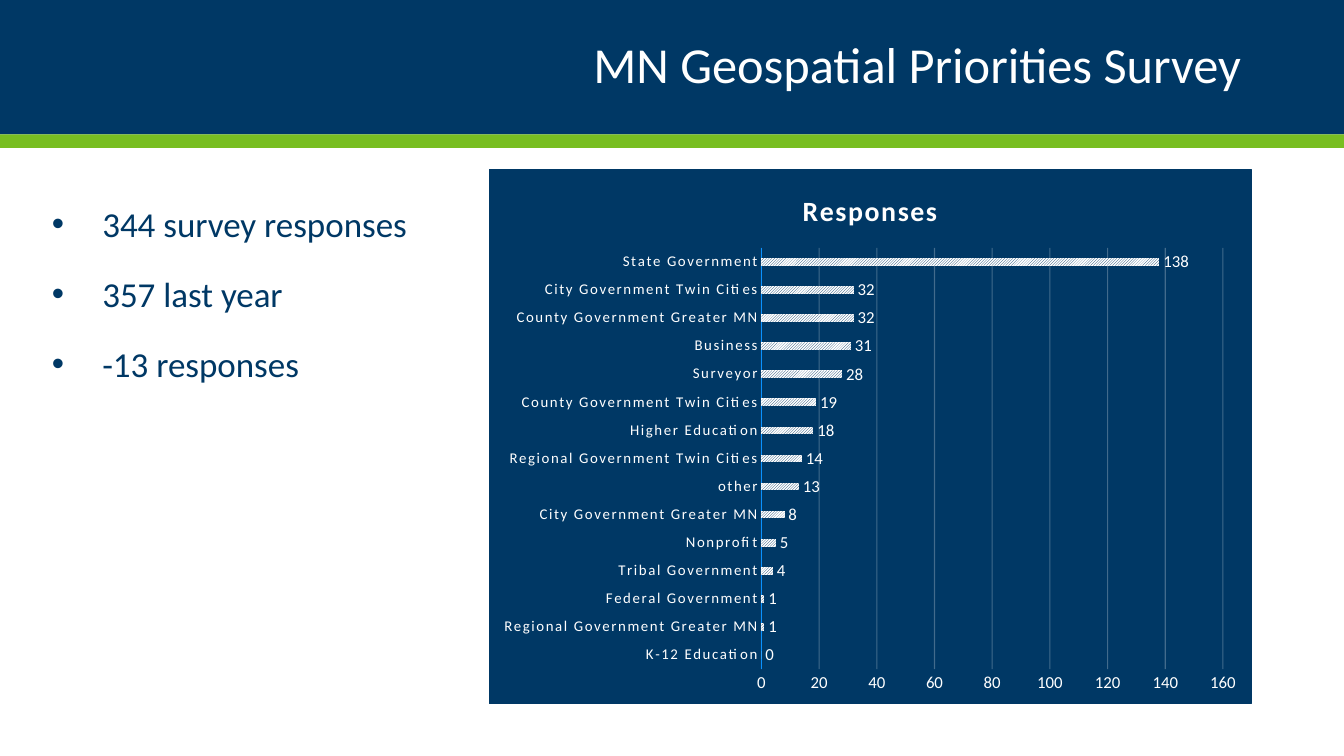
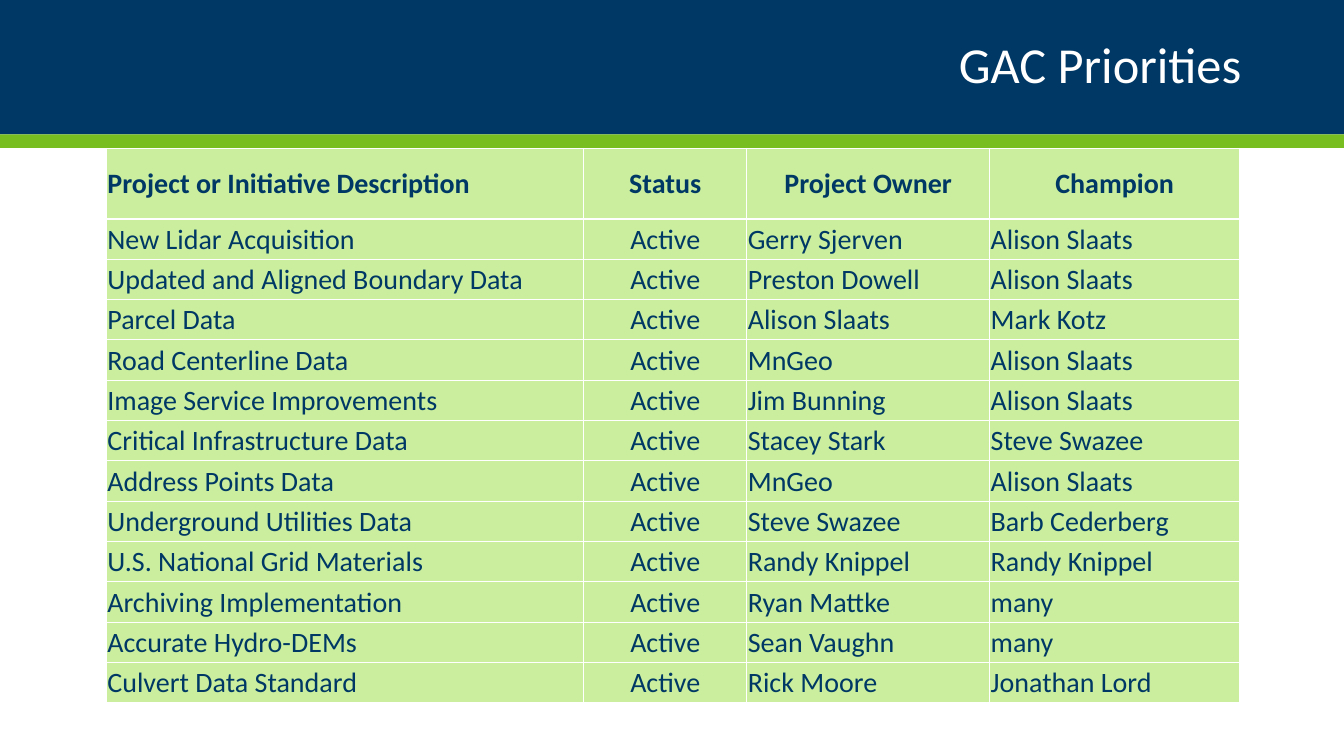
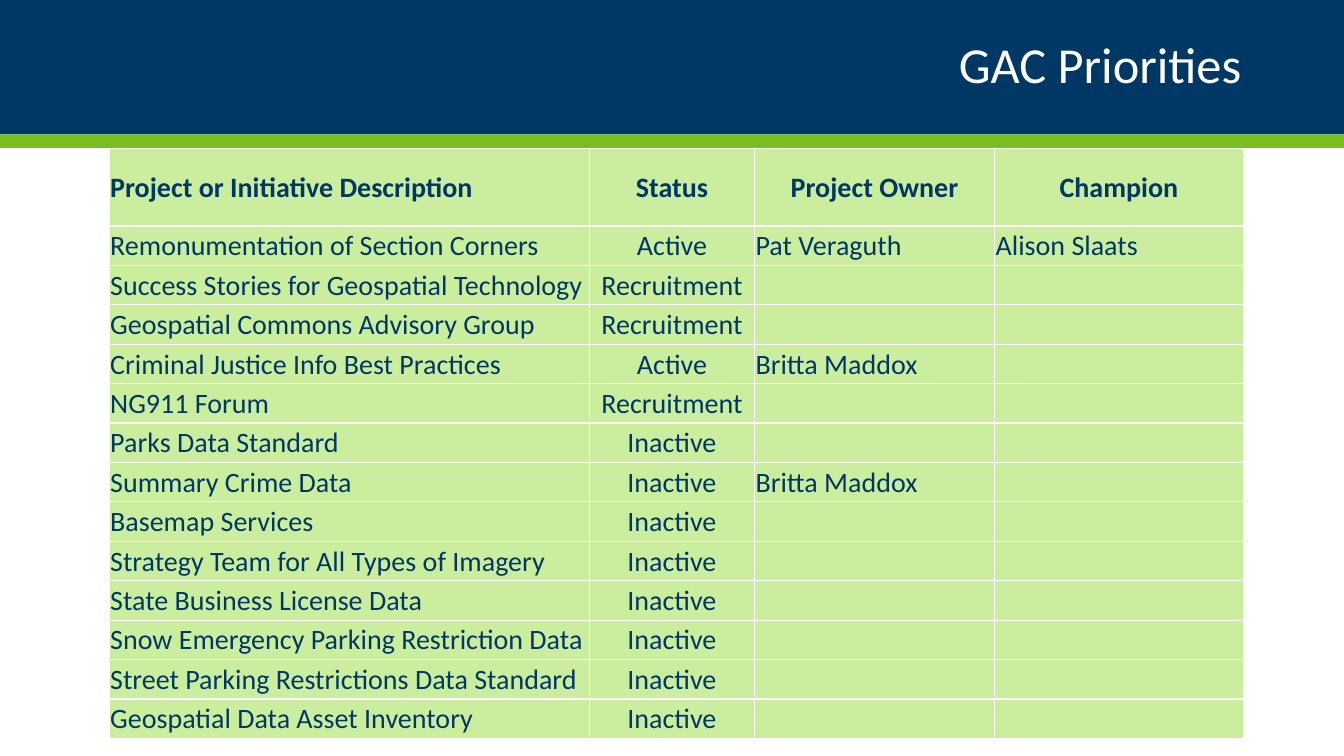
import dataclasses

import lxml.etree
import pptx
import pptx.chart.data
import pptx.dml.color
import pptx.enum.chart
import pptx.enum.dml
import pptx.enum.shapes
import pptx.enum.text
import pptx.oxml
import pptx.oxml.ns
import pptx.util

Pt = pptx.util.Pt
qn = pptx.oxml.ns.qn
ALIGN = pptx.enum.text.PP_ALIGN
MIDDLE = pptx.enum.text.MSO_ANCHOR.MIDDLE


@dataclasses.dataclass(frozen=True)
class Theme:
    # Colours
    navy: str = "003865"
    green: str = "78BE21"
    pale: str = "CAEE9D"
    white: str = "FFFFFF"
    blue: str = "0A92FF"
    # Type
    face: str = "Calibri"
    title: float = 36
    body: float = 25
    cell: float = 20
    head: float = 19.9
    label: float = 12
    group: float = 10.6
    small: float = 10
    # Slide and bands
    width: float = 960
    height: float = 540
    band: float = 96
    stripe: float = 9.6


THEME = Theme()

POINTS = ["344 survey responses", "357 last year", "-13 responses"]

COUNTS = {
    "K-12 Education": 0,
    "Regional Government Greater MN": 1,
    "Federal Government": 1,
    "Tribal Government": 4,
    "Nonprofit": 5,
    "City Government Greater MN": 8,
    "other": 13,
    "Regional Government Twin Cities": 14,
    "Higher Education": 18,
    "County Government Twin Cities": 19,
    "Surveyor": 28,
    "Business": 31,
    "County Government Greater MN": 32,
    "City Government Twin Cities": 32,
    "State Government": 138,
}

HEADER = ("Project or Initiative Description", "Status", "Project Owner", "Champion")

ACTIVE = [
    ("New Lidar Acquisition", "Active", "Gerry Sjerven", "Alison Slaats"),
    ("Updated and Aligned Boundary Data", "Active", "Preston Dowell", "Alison Slaats"),
    ("Parcel Data", "Active", "Alison Slaats", "Mark Kotz"),
    ("Road Centerline Data", "Active", "MnGeo", "Alison Slaats"),
    ("Image Service Improvements", "Active", "Jim Bunning", "Alison Slaats"),
    ("Critical Infrastructure Data", "Active", "Stacey Stark", "Steve Swazee"),
    ("Address Points Data", "Active", "MnGeo", "Alison Slaats"),
    ("Underground Utilities Data", "Active", "Steve Swazee", "Barb Cederberg"),
    ("U.S. National Grid Materials", "Active", "Randy Knippel", "Randy Knippel"),
    ("Archiving Implementation", "Active", "Ryan Mattke", "many"),
    ("Accurate Hydro-DEMs", "Active", "Sean Vaughn", "many"),
    ("Culvert Data Standard", "Active", "Rick Moore", "Jonathan Lord"),
]

OTHERS = [
    ("Remonumentation of Section Corners", "Active", "Pat Veraguth", "Alison Slaats"),
    ("Success Stories for Geospatial Technology", "Recruitment", "", ""),
    ("Geospatial Commons Advisory Group", "Recruitment", "", ""),
    ("Criminal Justice Info Best Practices", "Active", "Britta Maddox", ""),
    ("NG911 Forum", "Recruitment", "", ""),
    ("Parks Data Standard", "Inactive", "", ""),
    ("Summary Crime Data", "Inactive", "Britta Maddox", ""),
    ("Basemap Services", "Inactive", "", ""),
    ("Strategy Team for All Types of Imagery", "Inactive", "", ""),
    ("State Business License Data", "Inactive", "", ""),
    ("Snow Emergency Parking Restriction Data", "Inactive", "", ""),
    ("Street Parking Restrictions Data Standard", "Inactive", "", ""),
    ("Geospatial Data Asset Inventory", "Inactive", "", ""),
]


def rgb(code):
    return pptx.dml.color.RGBColor.from_string(code)


def style(font, size, color, bold=False):
    font.name = THEME.face
    font.size = Pt(size)
    font.bold = bold
    font.color.rgb = rgb(color)


# Shared parts
def add_bands(slide):
    """Put the two header bands in the layout, beneath its title."""
    tree = slide.slide_layout.shapes.element
    bands = [(0, THEME.band, THEME.navy), (THEME.band, THEME.stripe, THEME.green)]
    for spot, (top, height, color) in enumerate(bands, start=2):
        band = slide.shapes.add_shape(
            pptx.enum.shapes.MSO_SHAPE.RECTANGLE,
            Pt(0), Pt(top), Pt(THEME.width), Pt(height))
        band.shadow.inherit = False
        band.fill.solid()
        band.fill.fore_color.rgb = rgb(color)
        band.line.fill.background()
        tree.insert(spot, band.element)


def add_slide(deck, text):
    slide = deck.slides.add_slide(deck.slide_layouts[5])
    title = slide.shapes.title
    title.left, title.top, title.width, title.height = Pt(66), Pt(12), Pt(828), Pt(72)
    frame = title.text_frame
    frame.text = text
    frame.word_wrap = True
    frame.vertical_anchor = MIDDLE
    para = frame.paragraphs[0]
    para.alignment = ALIGN.RIGHT
    para.line_spacing = 0.9
    style(para.runs[0].font, THEME.title, THEME.white)
    return slide


# Bullet list
def add_list(slide, items, left, top, width, height):
    frame = slide.shapes.add_textbox(Pt(left), Pt(top), Pt(width), Pt(height)).text_frame
    frame.word_wrap = True
    for place, item in enumerate(items):
        para = frame.add_paragraph() if place else frame.paragraphs[0]
        para.text = item
        props = para._p.get_or_add_pPr()
        props.set("marL", str(Pt(36)))
        props.set("indent", str(-Pt(36)))
        tint = lxml.etree.SubElement(props, qn("a:buClr"))
        lxml.etree.SubElement(tint, qn("a:srgbClr"), val=THEME.navy)
        lxml.etree.SubElement(props, qn("a:buFont"), typeface="Arial")
        lxml.etree.SubElement(props, qn("a:buChar"), char="•")
        para.space_before = Pt(10 if place else 0)
        para.space_after = Pt(10)
        style(para.runs[0].font, THEME.body, THEME.navy)


# Bar chart
def fill_frame(chart):
    """Paint the chart's ground and leave its plot area clear."""
    space = pptx.oxml.ns.nsdecls("c", "a")
    solid = f'<a:solidFill><a:srgbClr val="{THEME.navy}"/></a:solidFill>'
    ground = pptx.oxml.parse_xml(
        f'<c:spPr {space}>{solid}<a:ln w="{Pt(0.75)}">{solid}</a:ln></c:spPr>')
    chart.element.find(qn("c:chart")).addnext(ground)
    clear = pptx.oxml.parse_xml(f"<c:spPr {space}><a:noFill/></c:spPr>")
    chart.element.xpath(".//c:plotArea")[0].append(clear)


def add_bars(slide, name, counts, left, top, width, height):
    data = pptx.chart.data.CategoryChartData()
    data.categories = list(counts)
    data.add_series(name, list(counts.values()))
    chart = slide.shapes.add_chart(
        pptx.enum.chart.XL_CHART_TYPE.BAR_CLUSTERED,
        Pt(left), Pt(top), Pt(width), Pt(height), data).chart
    style(chart.font, THEME.small, THEME.navy)
    chart.has_legend = False
    fill_frame(chart)

    # Title
    chart.has_title = True
    frame = chart.chart_title.text_frame
    frame.text = name
    style(frame.paragraphs[0].runs[0].font, THEME.head, THEME.white, bold=True)

    # Axes
    groups, scale = chart.category_axis, chart.value_axis
    for axis, size in ((groups, THEME.group), (scale, THEME.label)):
        axis.major_tick_mark = pptx.enum.chart.XL_TICK_MARK.NONE
        axis.minor_tick_mark = pptx.enum.chart.XL_TICK_MARK.NONE
        style(axis.tick_labels.font, size, THEME.white)
    groups.format.line.color.rgb = rgb(THEME.blue)
    groups.format.line.width = Pt(0.25)
    scale.format.line.fill.background()
    scale.minimum_scale, scale.maximum_scale, scale.major_unit = 0, 160, 20
    grid = scale.major_gridlines.format.line
    grid.color.rgb = rgb(THEME.white)
    grid.width = Pt(0.75)
    shade = chart.element.xpath(".//c:majorGridlines//a:srgbClr")[0]
    lxml.etree.SubElement(shade, qn("a:alpha"), val="25000")

    # Letter spacing
    chart.element.xpath(".//c:title//a:rPr")[0].set("spc", "100")
    chart.element.xpath(".//c:catAx//a:defRPr")[0].set("spc", "120")

    # Bars and labels
    plot = chart.plots[0]
    plot.vary_by_categories = False
    plot.gap_width = 269
    plot.overlap = -20
    series = plot.series[0]
    fill = series.format.fill
    fill.patterned()
    fill.pattern = pptx.enum.dml.MSO_PATTERN.LIGHT_UPWARD_DIAGONAL
    fill.fore_color.rgb = rgb(THEME.navy)
    fill.back_color.rgb = rgb(THEME.white)
    labels = series.data_labels
    labels.show_value = True
    labels.position = pptx.enum.chart.XL_LABEL_POSITION.OUTSIDE_END
    style(labels.font, THEME.label, THEME.white)


# Table
def fill_cell(cell, text, center, bold):
    cell.text_frame.text = text
    cell.vertical_anchor = MIDDLE
    cell.margin_left = cell.margin_right = cell.margin_top = Pt(0.72)
    cell.margin_bottom = Pt(0)
    para = cell.text_frame.paragraphs[0]
    para.alignment = ALIGN.CENTER if center else ALIGN.LEFT
    for run in para.runs:
        style(run.font, THEME.cell, THEME.navy, bold)
    props = cell._tc.get_or_add_tcPr()
    for side in ("lnL", "lnR", "lnT", "lnB"):
        edge = lxml.etree.SubElement(props, qn(f"a:{side}"), w=str(Pt(1)))
        solid = lxml.etree.SubElement(edge, qn("a:solidFill"))
        lxml.etree.SubElement(solid, qn("a:srgbClr"), val=THEME.white)
    cell.fill.solid()
    cell.fill.fore_color.rgb = rgb(THEME.pale)


def add_grid(slide, rows, left, widths, head, step):
    lines = [HEADER, *rows]
    table = slide.shapes.add_table(
        len(lines), len(widths), Pt(left), Pt(106),
        Pt(sum(widths)), Pt(head + step * len(rows))).table
    table.first_row = True
    table.horz_banding = False
    for column, width in zip(table.columns, widths):
        column.width = Pt(width)
    for r, line in enumerate(lines):
        table.rows[r].height = Pt(step if r else head)
        for c, text in enumerate(line):
            center = c == 1 or (r == 0 and c > 0)
            fill_cell(table.cell(r, c), text, center, bold=r == 0)


def main():
    deck = pptx.Presentation()
    deck.slide_width, deck.slide_height = Pt(THEME.width), Pt(THEME.height)

    # Survey
    slide = add_slide(deck, "MN Geospatial Priorities Survey")
    add_bands(slide)
    add_list(slide, POINTS, 30, 141, 303, 343)
    add_bars(slide, "Responses", COUNTS, 349, 121, 545, 382)

    # Active projects
    slide = add_slide(deck, "GAC Priorities")
    add_grid(slide, ACTIVE, 76, (341, 116.5, 173.5, 178.5), 50.4, 28.8)

    # Other projects
    slide = add_slide(deck, "GAC Priorities")
    add_grid(slide, OTHERS, 78, (343, 118, 171.5, 177.5), 55.5, 28.15)

    deck.save("out.pptx")


if __name__ == "__main__":
    main()
